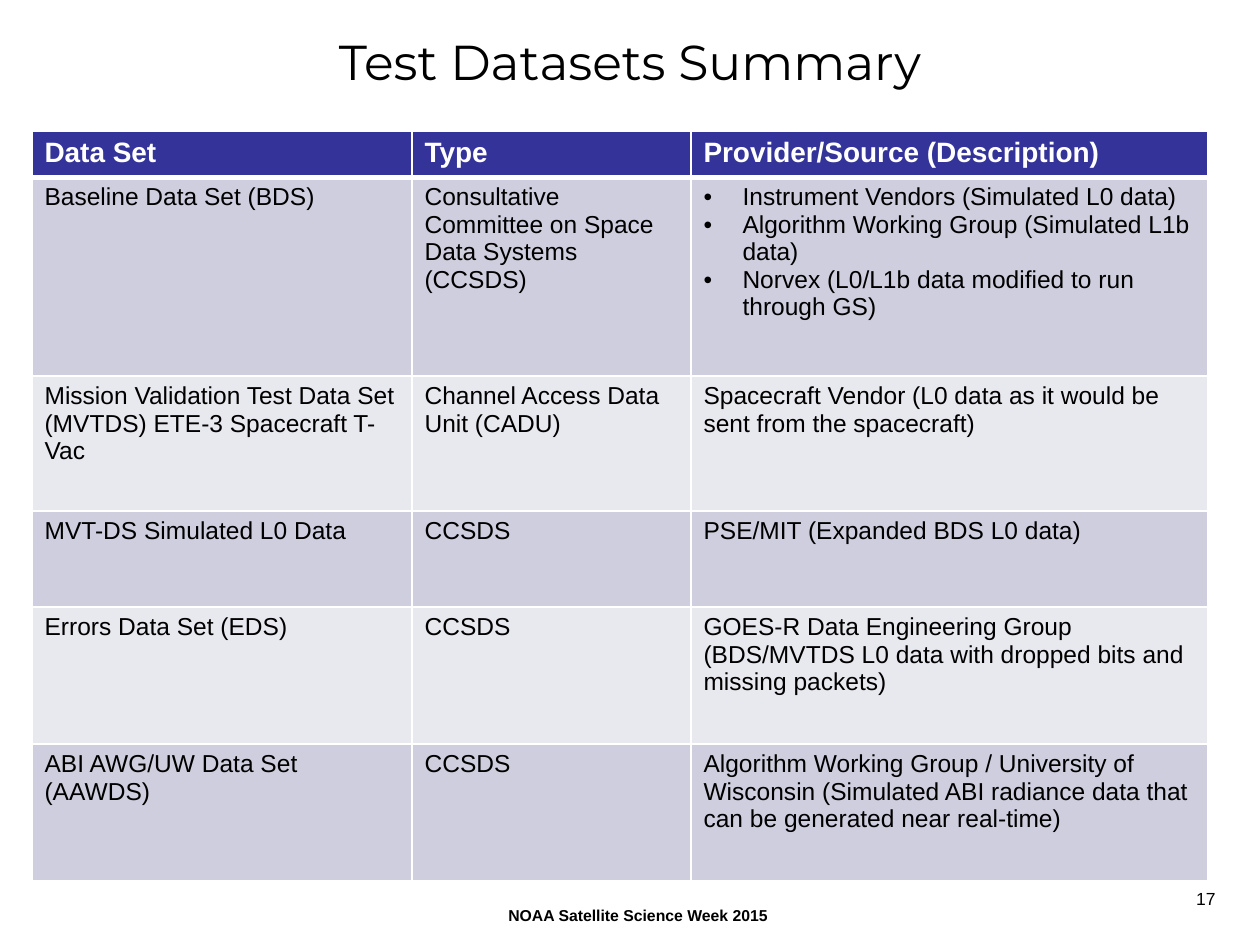
from lxml.etree import SubElement
from pptx import Presentation
from pptx.dml.color import RGBColor
from pptx.enum.text import MSO_ANCHOR, PP_ALIGN
from pptx.oxml.ns import qn
from pptx.util import Pt

PX = 914400 / 126
COLORS = {"ink": "000000", "paper": "FFFFFF", "header": "333399",
          "odd": "CECEDE", "even": "E8E8EF"}


def px(length):
    return round(length * PX)


def style(paragraph, size, color="ink", name="Arial", bold=False):
    font = paragraph.font
    for key, value in {"size": Pt(size), "name": name, "bold": bold}.items():
        setattr(font, key, value)
    font.color.rgb = RGBColor.from_string(COLORS[color])


prs = Presentation()
prs.slide_width, prs.slide_height = px(1260), px(945)
slide = prs.slides.add_slide(prs.slide_layouts[6])

# Title, footer and page number
captions = [
    ("Test Datasets Summary", (215, 9, 830, 103), MSO_ANCHOR.MIDDLE,
     PP_ALIGN.CENTER, {"size": 28, "name": "Montserrat"}),
    ("NOAA Satellite Science Week 2015", (284, 881, 708, 50), MSO_ANCHOR.BOTTOM,
     PP_ALIGN.CENTER, {"size": 9, "bold": True}),
    ("17", (1102, 882, 126, 63), MSO_ANCHOR.TOP, PP_ALIGN.RIGHT, {"size": 10}),
]
for words, place, anchor, alignment, look in captions:
    frame = slide.shapes.add_textbox(*map(px, place)).text_frame
    frame.word_wrap = True
    frame.vertical_anchor = anchor
    frame.text = words
    frame.paragraphs[0].alignment = alignment
    style(frame.paragraphs[0], **look)

# Data set table; a list in a cell becomes bullets
datasets = [
    ("Data Set", "Type", "Provider/Source (Description)"),
    ("Baseline Data Set (BDS)",
     "Consultative Committee on Space Data Systems (CCSDS)",
     ["Instrument Vendors (Simulated L0 data)",
      "Algorithm Working Group (Simulated L1b data)",
      "Norvex (L0/L1b data modified to run through GS)"]),
    ("Mission Validation Test Data Set (MVTDS) ETE-3 Spacecraft T-Vac",
     "Channel Access Data Unit (CADU)",
     "Spacecraft Vendor (L0 data as it would be sent from the spacecraft)"),
    ("MVT-DS Simulated L0 Data", "CCSDS", "PSE/MIT (Expanded BDS L0 data)"),
    ("Errors Data Set (EDS)", "CCSDS",
     "GOES-R Data Engineering Group (BDS/MVTDS L0 data with dropped bits "
     "and missing packets)"),
    ("ABI AWG/UW Data Set (AAWDS)", "CCSDS",
     "Algorithm Working Group / University of Wisconsin (Simulated ABI "
     "radiance data that can be generated near real-time)"),
]
column_widths = [380, 279, 517]
row_heights = [44, 199, 135, 96, 137, 137]
table = slide.shapes.add_table(
    len(row_heights), len(column_widths), px(32), px(131),
    px(sum(column_widths)), px(sum(row_heights))).table
for column, width in zip(table.columns, column_widths):
    column.width = px(width)
for row, height in zip(table.rows, row_heights):
    row.height = px(height)

for r, entries in enumerate(datasets):
    fill = "header" if r == 0 else "odd" if r % 2 else "even"
    rules = {"lnL": 1, "lnR": 1, "lnT": 3 if r == 1 else 1, "lnB": 3 if r == 0 else 1}
    for c, entry in enumerate(entries):
        cell = table.cell(r, c)
        # White rules between cells
        properties = cell._tc.get_or_add_tcPr()
        for side, points in rules.items():
            line = SubElement(properties, qn(f"a:{side}"), w=str(Pt(points)))
            paint = SubElement(line, qn("a:solidFill"))
            SubElement(paint, qn("a:srgbClr"), val=COLORS["paper"])
        cell.fill.solid()
        cell.fill.fore_color.rgb = RGBColor.from_string(COLORS[fill])

        bulleted = isinstance(entry, list)
        cell.text = "\n".join(entry) if bulleted else entry
        for paragraph in cell.text_frame.paragraphs:
            if bulleted:
                indent = paragraph._p.get_or_add_pPr()
                indent.set("marL", str(px(39)))
                indent.set("indent", str(px(-39)))
                SubElement(indent, qn("a:buFont"), typeface="Arial")
                SubElement(indent, qn("a:buChar"), char="•")
            if r == 0:
                style(paragraph, 16, "paper", bold=True)
            else:
                style(paragraph, 14)

prs.save("out.pptx")
